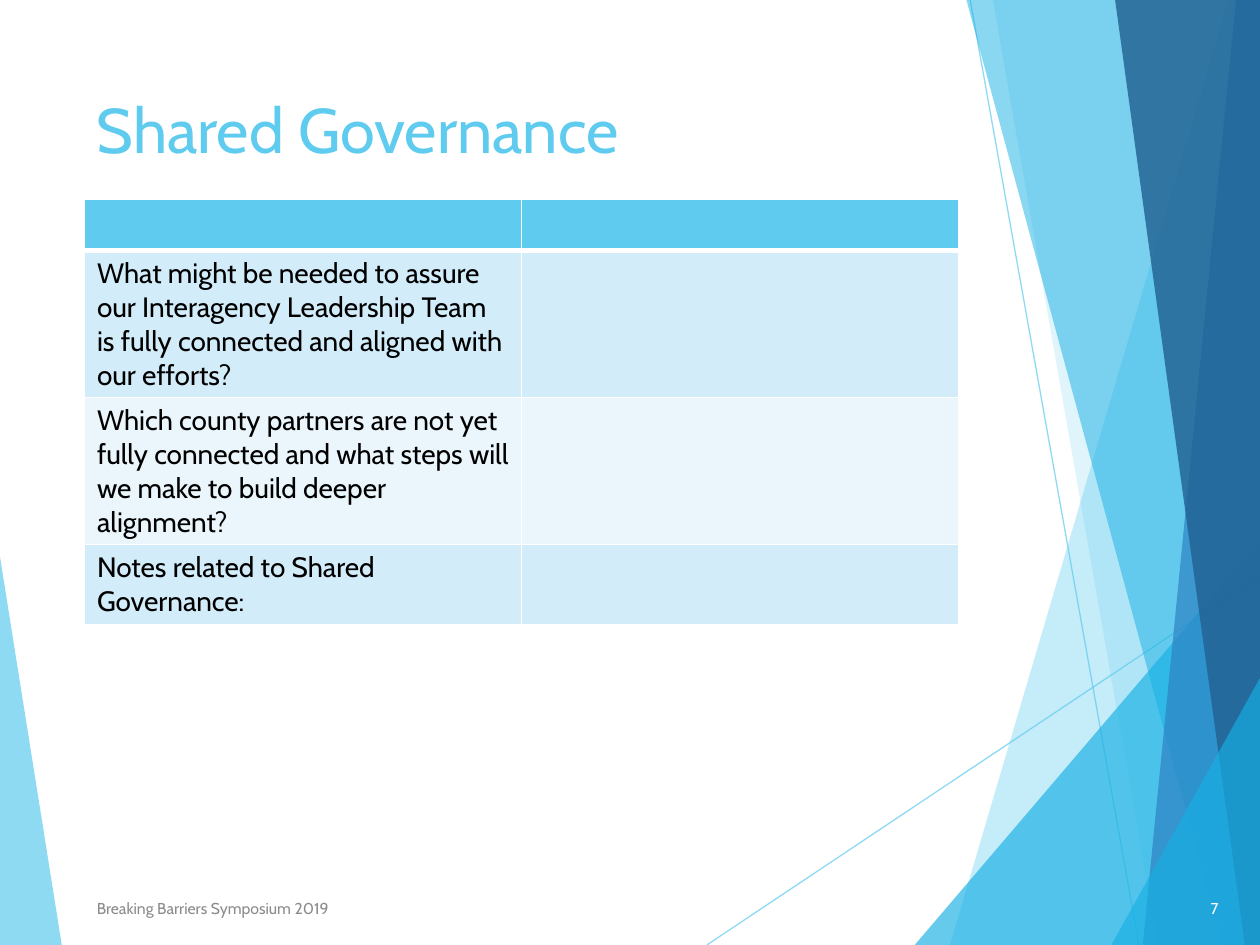
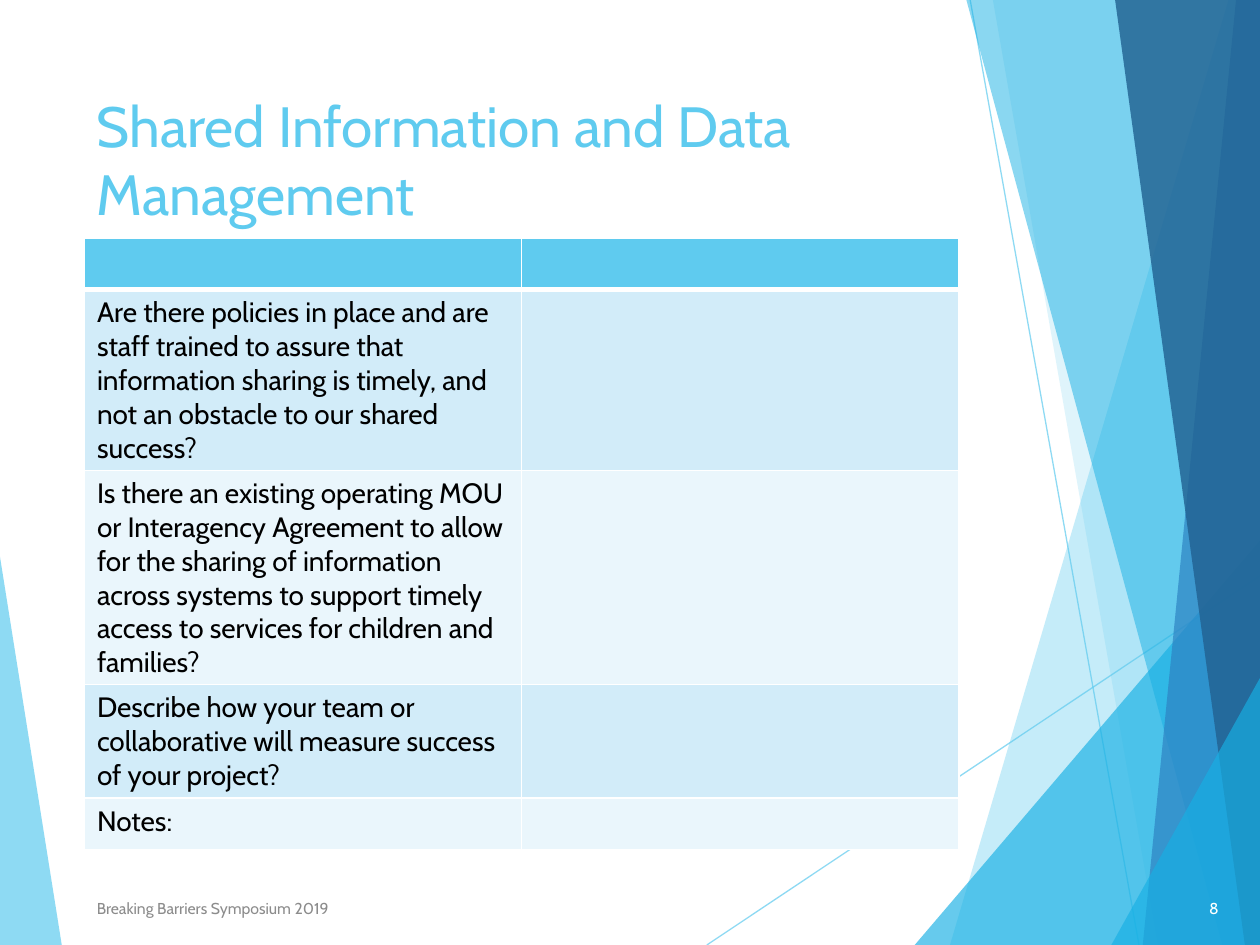
import pptx
import pptx.dml.color
import pptx.enum.shapes
import pptx.enum.text
import pptx.oxml
import pptx.oxml.ns
import pptx.util
from dataclasses import dataclass
from lxml import etree

# ---- Content ----
FOOTER = "Breaking Barriers Symposium 2019"
PAGES = [
    dict(number=7, title="Shared Governance", title_size=36, table_top=1.58, questions=[
        "What might be needed to assure our Interagency Leadership Team is fully connected "
        "and aligned with our efforts?",
        "Which county partners are not yet fully connected and what steps will we make to "
        "build deeper alignment?",
        "Notes related to Shared Governance:",
    ]),
    dict(number=8, title="Shared Information and Data Management", title_size=32.4,
         table_top=1.89, questions=[
        "Are there policies in place and are staff trained to assure that information "
        "sharing is timely, and not an obstacle to our shared success?",
        "Is there an existing operating MOU or Interagency Agreement to allow for the "
        "sharing of information across systems to support timely access to services for "
        "children and families?",
        "Describe how your team or collaborative will measure success of your project?",
        "Notes:",
    ]),
]


# ---- Theme ----
@dataclass(frozen=True)
class Theme:
    font: str = "Cabin"
    sky: str = "5FCBEF"
    cyan: str = "17B0E4"
    blue: str = "2E83C3"
    navy: str = "226292"
    white: str = "FFFFFF"
    black: str = "000000"
    grey: str = "8C8C8C"
    stripes: tuple = ("D2ECF9", "EAF6FC")
    body_size: float = 16
    footer_size: float = 9
    hairline: float = 0.75
    cell_line: float = 1
    header_line: float = 3


THEME = Theme()
WIDTH, HEIGHT = 10, 7.5
LEFT, CONTENT_WIDTH = 0.67, 6.94
TITLE_TOP, TITLE_HEIGHT = 0.67, 0.79
FOOTER_TOP, FOOTER_HEIGHT = 7.01, 0.4
ROW_HEIGHT, COLUMNS = 0.41, 2

# Backdrop from back to front: colour, opacity in percent, corner points
LEFT_WEDGE = (THEME.sky, 70, [(0, 4.42), (0.49, HEIGHT), (0, HEIGHT)])
RAYS = [((5.61, HEIGHT), (WIDTH, 4.57)), ((7.7, 0), (9.04, HEIGHT))]
RAY_OPACITY = 70
RIGHT_TOP, RIGHT_FOOT = (WIDTH, 0), (WIDTH, HEIGHT)


def band(color, opacity, top_x, foot_x):
    """A full-height band that reaches the right edge."""
    return color, opacity, [(top_x, 0), (foot_x, HEIGHT), RIGHT_FOOT, RIGHT_TOP]


def corner(color, opacity, foot_x, edge_y):
    """A triangle in the lower right corner."""
    return color, opacity, [(foot_x, HEIGHT), (WIDTH, edge_y), RIGHT_FOOT]


RIGHT_BANDS = [
    band(THEME.sky, 36, 9.75, 7.54),
    band(THEME.sky, 20, 7.88, 9.19),
    corner(THEME.cyan, 66, 7.26, 4.29),
    band(THEME.cyan, 50, 7.67, 9.7),
    band(THEME.blue, 70, 9.81, 9.07),
    band(THEME.navy, 82, 8.85, 9.88),
    corner(THEME.cyan, 66, 8.82, 5.38),
]


# ---- Helpers ----
def inches(*lengths):
    return [pptx.util.Inches(length) for length in lengths]


def rgb(color):
    return pptx.dml.color.RGBColor.from_string(color)


def set_opacity(shape, percent):
    for color in shape._element.spPr.iter(pptx.oxml.ns.qn("a:srgbClr")):
        alpha = etree.SubElement(color, pptx.oxml.ns.qn("a:alpha"))
        alpha.set("val", str(percent * 1000))


def add_span(para, text, size, color):
    span = para.add_run()
    span.text = text
    span.font.name = THEME.font
    span.font.size = pptx.util.Pt(size)
    span.font.color.rgb = rgb(color)


def add_text(page, place, text, size, color,
             anchor=pptx.enum.text.MSO_ANCHOR.MIDDLE, align=pptx.enum.text.PP_ALIGN.LEFT):
    box = page.shapes.add_textbox(*inches(*place))
    box.text_frame.word_wrap = True
    box.text_frame.vertical_anchor = anchor
    para = box.text_frame.paragraphs[0]
    para.alignment = align
    add_span(para, text, size, color)


def add_polygon(page, color, opacity, points):
    start, *others = [inches(*point) for point in points]
    builder = page.shapes.build_freeform(*start)
    builder.add_line_segments(others, close=True)
    shape = builder.convert_to_shape()
    shape.shadow.inherit = False
    shape.fill.solid()
    shape.fill.fore_color.rgb = rgb(color)
    shape.line.fill.background()
    set_opacity(shape, opacity)


def add_ray(page, start, end):
    ray = page.shapes.add_connector(
        pptx.enum.shapes.MSO_CONNECTOR.STRAIGHT, *inches(*start, *end))
    ray.line.color.rgb = rgb(THEME.sky)
    ray.line.width = pptx.util.Pt(THEME.hairline)
    set_opacity(ray, RAY_OPACITY)
    etree.SubElement(ray._element.spPr, pptx.oxml.ns.qn("a:effectLst"))


def style_cell(cell, fill, top_line, bottom_line):
    cell.fill.solid()
    cell.fill.fore_color.rgb = rgb(fill)
    sides = [("L", THEME.cell_line), ("R", THEME.cell_line),
             ("T", top_line), ("B", bottom_line)]
    for position, (side, width) in enumerate(sides):
        border = pptx.oxml.parse_xml(
            f'<a:ln{side} {pptx.oxml.ns.nsdecls("a")} w="{pptx.util.Pt(width)}">'
            f'<a:solidFill><a:srgbClr val="{THEME.white}"/></a:solidFill></a:ln{side}>')
        cell._tc.get_or_add_tcPr().insert(position, border)


# ---- Slide parts ----
def add_backdrop(page):
    add_polygon(page, *LEFT_WEDGE)
    for start, end in RAYS:
        add_ray(page, start, end)
    for shape in RIGHT_BANDS:
        add_polygon(page, *shape)


def add_question_table(page, top, questions):
    row_count = len(questions) + 1
    table = page.shapes.add_table(row_count, COLUMNS, *inches(
        LEFT, top, CONTENT_WIDTH, ROW_HEIGHT * row_count)).table
    table.horz_banding = False
    for index in range(row_count):
        fill = THEME.stripes[(index - 1) % 2] if index else THEME.sky
        top_line = THEME.header_line if index == 1 else THEME.cell_line
        bottom_line = THEME.cell_line if index else THEME.header_line
        for cell in table.rows[index].cells:
            style_cell(cell, fill, top_line, bottom_line)
    for index, question in enumerate(questions, 1):
        para = table.cell(index, 0).text_frame.paragraphs[0]
        add_span(para, question, THEME.body_size, THEME.black)


def add_footer(page, number):
    add_text(page, (LEFT, FOOTER_TOP, 5.06, FOOTER_HEIGHT), FOOTER,
             THEME.footer_size, THEME.grey)
    add_text(page, (9.21, FOOTER_TOP, 0.56, FOOTER_HEIGHT), str(number),
             THEME.footer_size, THEME.white, align=pptx.enum.text.PP_ALIGN.RIGHT)


def main():
    deck = pptx.Presentation()
    deck.slide_width, deck.slide_height = inches(WIDTH, HEIGHT)
    for content in PAGES:
        page = deck.slides.add_slide(deck.slide_layouts[6])
        add_backdrop(page)
        add_text(page, (LEFT, TITLE_TOP, CONTENT_WIDTH, TITLE_HEIGHT), content["title"],
                 content["title_size"], THEME.sky, pptx.enum.text.MSO_ANCHOR.TOP)
        add_question_table(page, content["table_top"], content["questions"])
        add_footer(page, content["number"])
    deck.save("out.pptx")


if __name__ == "__main__":
    main()
